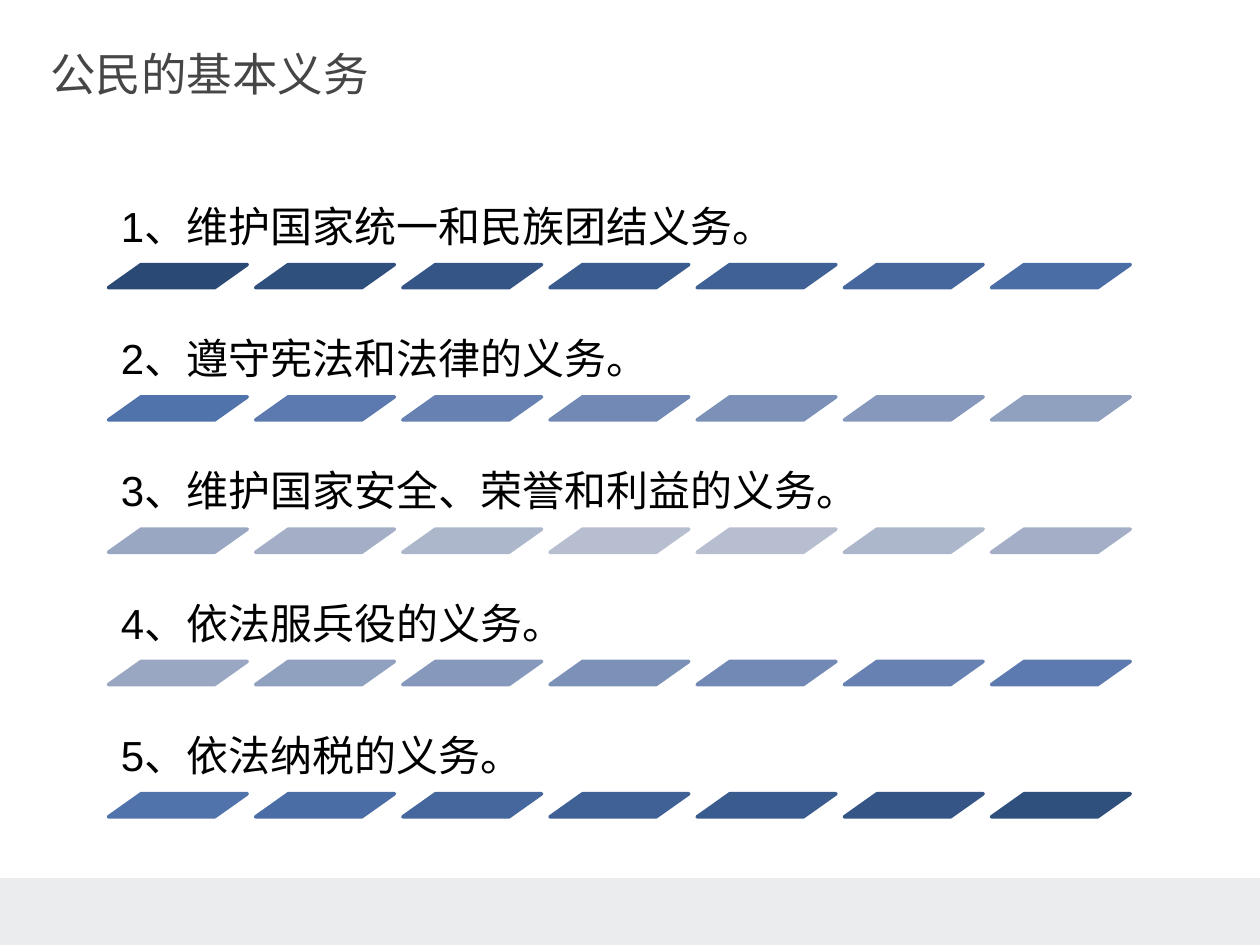
from pptx import Presentation
from pptx.dml.color import RGBColor
from pptx.enum.shapes import MSO_SHAPE
from pptx.enum.text import MSO_ANCHOR
from pptx.util import Pt

DUTIES = [
    "1、维护国家统一和民族团结义务。",
    "2、遵守宪法和法律的义务。",
    "3、维护国家安全、荣誉和利益的义务。",
    "4、依法服兵役的义务。",
    "5、依法纳税的义务。",
]
RAMP = (
    "2A4974 2F4F7D 345585 3A5B8D 3F6196 45679D 4B6DA5 5173AC 5C7AAF "
    "6782B2 7289B5 7C91B8 8698BB 90A0BF 9AA7C3 A4AFC7 ADB7CB B7BECF"
).split()
BLUES = RAMP + RAMP[::-1]
LEFT = 62
TEXT_TOP = 96.7
BAR_TOP = 151.2
ROW_PITCH = 75.6
BAR_PITCH = 84.1
BARS_PER_ROW = 7


def color(value):
    """Turn a hex string into a colour."""
    return RGBColor.from_string(value)


def add_shape(page, kind, left, top, width, height, fill):
    """Draw a flat shape without an outline."""
    shape = page.shapes.add_shape(kind, Pt(left), Pt(top), Pt(width), Pt(height))
    shape.shadow.inherit = False
    shape.fill.solid()
    shape.fill.fore_color.rgb = color(fill)
    shape.line.fill.background()
    return shape


def add_text(page, text, left, top, width, height, size, ink, inset, anchor, spacing):
    """Place one line of text in a box."""
    box = page.shapes.add_textbox(Pt(left), Pt(top), Pt(width), Pt(height))
    frame = box.text_frame
    frame.word_wrap = True
    frame.vertical_anchor = anchor
    frame.margin_left = frame.margin_right = Pt(inset)
    frame.margin_top = frame.margin_bottom = Pt(inset)
    para = frame.paragraphs[0]
    para.line_spacing = spacing
    span = para.add_run()
    span.text = text
    span.font.name = "Arial"
    span.font.size = Pt(size)
    span.font.color.rgb = color(ink)


def add_bar(page, left, top, fill):
    """Draw one slanted bar with an outline in its own colour."""
    bar = add_shape(page, MSO_SHAPE.PARALLELOGRAM, left, top, 79.3, 13.2, fill)
    bar.adjustments[0] = 1.41
    bar.line.color.rgb = color(fill)
    bar.line.width = Pt(2)


def add_duty(page, row, text):
    """Add a duty and the strip of bars under it."""
    offset = row * ROW_PITCH
    add_text(page, text, LEFT, TEXT_TOP + offset, 596, 54.2, 24, "000000",
             7.2, MSO_ANCHOR.BOTTOM, 0.9)
    fills = BLUES[row * BARS_PER_ROW:(row + 1) * BARS_PER_ROW]
    for column, fill in enumerate(fills):
        add_bar(page, LEFT + column * BAR_PITCH, BAR_TOP + offset, fill)


def main():
    """Build the slide and save it."""
    deck = Presentation()
    deck.slide_width, deck.slide_height = Pt(720), Pt(540)
    page = deck.slides.add_slide(deck.slide_layouts[6])
    add_shape(page, MSO_SHAPE.RECTANGLE, 0, 501.8, 720, 38.2, "EBECED")
    for row, text in enumerate(DUTIES):
        add_duty(page, row, text)
    add_text(page, "公民的基本义务", 28.8, 26.6, 662.4, 31, 26, "464646",
             0, MSO_ANCHOR.TOP, 1.0)
    deck.save("out.pptx")


if __name__ == "__main__":
    main()
